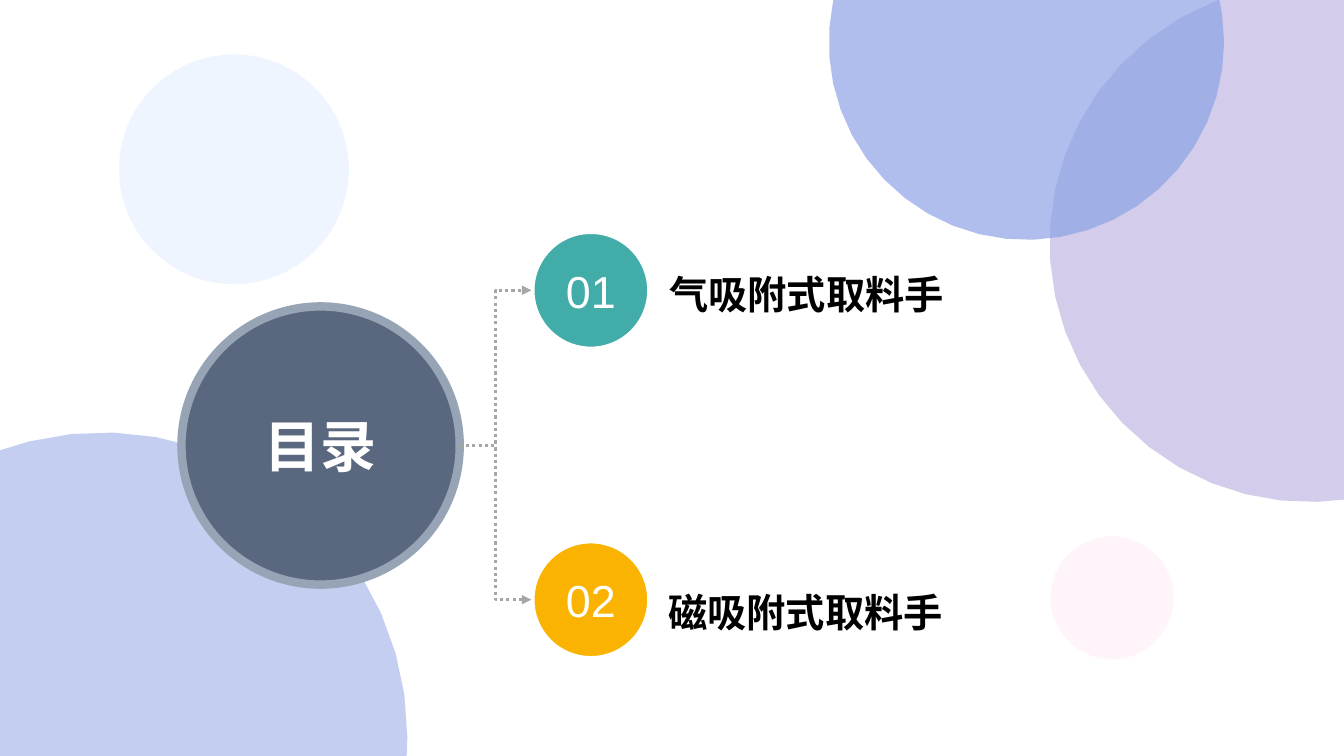
import math
from dataclasses import dataclass

import pptx
import pptx.dml.color
import pptx.enum.dml
import pptx.enum.shapes
import pptx.enum.text
import pptx.oxml
import pptx.oxml.ns
import pptx.shapes.autoshape
import pptx.slide
import pptx.text.text
import pptx.util

Inches = pptx.util.Inches
RGBColor = pptx.dml.color.RGBColor

SLIDE_WIDTH, SLIDE_HEIGHT = 13.33, 7.5
ARC_STEP = 8
FONT_NAME = "Arial"
WHITE = RGBColor(0xFF, 0xFF, 0xFF)
BLACK = RGBColor(0x00, 0x00, 0x00)
PERIWINKLE = RGBColor(0x8C, 0xA2, 0xE6)
LAVENDER = RGBColor(0xA5, 0x95, 0xD7)
SKY = RGBColor(0x6E, 0xAC, 0xF7)
PINK = RGBColor(0xF1, 0x66, 0xAC)
TEAL = RGBColor(0x42, 0xAC, 0xA8)
AMBER = RGBColor(0xFA, 0xB3, 0x01)
SLATE = RGBColor(0x59, 0x68, 0x7F)
SLATE_RIM = RGBColor(0x97, 0xA4, 0xB6)
GRAY = RGBColor(0xA6, 0xA6, 0xA6)

HUB_LEFT, HUB_TOP, HUB_SIZE = 1.8, 3.04, 2.76
BADGE_LEFT, BADGE_SIZE = 5.27, 1.18
LABEL_WIDTH, LABEL_HEIGHT = 5.16, 1.01


@dataclass(frozen=True)
class Bubble:
    center_x: float
    center_y: float
    radius: float
    color: RGBColor
    opacity: int


@dataclass(frozen=True)
class Chapter:
    number: str
    title: str
    color: RGBColor
    badge_top: float
    label_left: float
    label_top: float


BUBBLES = [
    Bubble(1.02, 7.31, 3.02, PERIWINKLE, 52),
    Bubble(12.98, 2.41, 2.57, LAVENDER, 48),
    Bubble(10.18, 0.42, 1.96, PERIWINKLE, 69),
    Bubble(2.32, 1.68, 1.14, SKY, 11),
    Bubble(11.03, 5.93, 0.61, PINK, 7),
]

CHAPTERS = [
    Chapter("01", "气吸附式取料手", TEAL, 2.29, 6.64, 2.29),
    Chapter("02", "磁吸附式取料手", AMBER, 5.36, 6.63, 5.45),
]


def clipped_outline(bubble: Bubble) -> list[tuple[float, float]]:
    """Return arc points, edge crossings and covered slide corners in angular order."""
    angles = [math.radians(degree) for degree in range(0, 360, ARC_STEP)]
    for edge in (0, SLIDE_WIDTH):
        ratio = (edge - bubble.center_x) / bubble.radius
        if abs(ratio) < 1:
            angles += [math.acos(ratio), -math.acos(ratio)]
    for edge in (0, SLIDE_HEIGHT):
        ratio = (edge - bubble.center_y) / bubble.radius
        if abs(ratio) < 1:
            angles += [math.asin(ratio), math.pi - math.asin(ratio)]
    arc = [
        (bubble.center_x + bubble.radius * math.cos(angle),
         bubble.center_y + bubble.radius * math.sin(angle))
        for angle in angles
    ]
    center = (bubble.center_x, bubble.center_y)
    corners = [(x, y) for x in (0, SLIDE_WIDTH) for y in (0, SLIDE_HEIGHT)]
    points = [
        (x, y) for x, y in arc
        if -0.001 <= x <= SLIDE_WIDTH + 0.001 and -0.001 <= y <= SLIDE_HEIGHT + 0.001
    ]
    points += [corner for corner in corners if math.dist(corner, center) < bubble.radius]
    return sorted(points, key=lambda point: math.atan2(point[1] - center[1], point[0] - center[0]))


def add_clipped_circle(slide: pptx.slide.Slide, bubble: Bubble) -> pptx.shapes.autoshape.Shape:
    points = [(Inches(x), Inches(y)) for x, y in clipped_outline(bubble)]
    builder = slide.shapes.build_freeform(*points[0])
    builder.add_line_segments(points[1:], close=True)
    return builder.convert_to_shape()


def add_circle(
    slide: pptx.slide.Slide, left: float, top: float, size: float
) -> pptx.shapes.autoshape.Shape:
    circle = slide.shapes.add_shape(
        pptx.enum.shapes.MSO_SHAPE.OVAL,
        Inches(left), Inches(top), Inches(size), Inches(size),
    )
    circle.shadow.inherit = False
    return circle


def add_bubble(slide: pptx.slide.Slide, bubble: Bubble) -> None:
    left, top = bubble.center_x - bubble.radius, bubble.center_y - bubble.radius
    size = 2 * bubble.radius
    fits = min(left, top) >= 0 and left + size <= SLIDE_WIDTH and top + size <= SLIDE_HEIGHT
    shape = add_circle(slide, left, top, size) if fits else add_clipped_circle(slide, bubble)
    shape.shadow.inherit = False
    shape.line.fill.background()
    shape.fill.solid()
    shape.fill.fore_color.rgb = bubble.color
    color = shape.element.spPr.find(".//" + pptx.oxml.ns.qn("a:srgbClr"))
    color.append(pptx.oxml.parse_xml(
        f'<a:alpha {pptx.oxml.ns.nsdecls("a")} val="{bubble.opacity * 1000}"/>'
    ))


def add_rimmed_circle(
    slide: pptx.slide.Slide, left: float, top: float, size: float,
    color: RGBColor, rim_color: RGBColor, rim_width: float,
) -> pptx.shapes.autoshape.Shape:
    circle = add_circle(slide, left, top, size)
    circle.fill.solid()
    circle.fill.fore_color.rgb = color
    circle.line.color.rgb = rim_color
    circle.line.width = pptx.util.Pt(rim_width)
    return circle


def set_text(
    frame: pptx.text.text.TextFrame, text: str, size: int, color: RGBColor,
    bold: bool, alignment: pptx.enum.text.PP_ALIGN,
) -> None:
    frame.text = text
    frame.word_wrap = True
    frame.auto_size = pptx.enum.text.MSO_AUTO_SIZE.NONE
    frame.vertical_anchor = pptx.enum.text.MSO_ANCHOR.MIDDLE
    paragraph = frame.paragraphs[0]
    paragraph.alignment = alignment
    font = paragraph.runs[0].font
    font.name, font.size, font.bold = FONT_NAME, pptx.util.Pt(size), bold
    font.color.rgb = color


def add_hub(slide: pptx.slide.Slide) -> None:
    """Draw the central disc with the slide title in front of it."""
    add_rimmed_circle(slide, HUB_LEFT, HUB_TOP, HUB_SIZE, SLATE, SLATE_RIM, 6)
    title = slide.shapes.title
    title.left, title.top = Inches(HUB_LEFT), Inches(HUB_TOP)
    title.width = title.height = Inches(HUB_SIZE)
    set_text(title.text_frame, "目录", 40, WHITE, True, pptx.enum.text.PP_ALIGN.CENTER)
    title.element.getparent().append(title.element)


def add_branch(slide: pptx.slide.Slide, chapter: Chapter) -> None:
    """Link the central disc to a chapter badge with a dotted elbow arrow."""
    branch = slide.shapes.add_connector(
        pptx.enum.shapes.MSO_CONNECTOR.ELBOW,
        Inches(HUB_LEFT + HUB_SIZE), Inches(HUB_TOP + HUB_SIZE / 2),
        Inches(BADGE_LEFT), Inches(chapter.badge_top + BADGE_SIZE / 2),
    )
    branch.line.color.rgb = GRAY
    branch.line.width = pptx.util.Pt(2.25)
    branch.line.dash_style = pptx.enum.dml.MSO_LINE.ROUND_DOT
    namespace = pptx.oxml.ns.nsdecls("a")
    properties = branch.element.spPr
    properties.find(pptx.oxml.ns.qn("a:ln")).append(
        pptx.oxml.parse_xml(f'<a:tailEnd {namespace} type="triangle"/>')
    )
    properties.append(pptx.oxml.parse_xml(f"<a:effectLst {namespace}/>"))


def add_chapter(slide: pptx.slide.Slide, chapter: Chapter) -> None:
    badge = add_rimmed_circle(
        slide, BADGE_LEFT, chapter.badge_top, BADGE_SIZE, chapter.color, WHITE, 4.5
    )
    set_text(badge.text_frame, chapter.number, 32, WHITE, False, pptx.enum.text.PP_ALIGN.CENTER)
    label = slide.shapes.add_textbox(
        Inches(chapter.label_left), Inches(chapter.label_top),
        Inches(LABEL_WIDTH), Inches(LABEL_HEIGHT),
    )
    frame = label.text_frame
    frame.margin_left = frame.margin_right = 0
    set_text(frame, chapter.title, 28, BLACK, True, pptx.enum.text.PP_ALIGN.LEFT)
    frame.paragraphs[0].line_spacing = 1.5


def main() -> None:
    presentation = pptx.Presentation()
    presentation.slide_width = Inches(SLIDE_WIDTH)
    presentation.slide_height = Inches(SLIDE_HEIGHT)
    slide = presentation.slides.add_slide(presentation.slide_layouts.get_by_name("Title Only"))
    for bubble in BUBBLES:
        add_bubble(slide, bubble)
    add_hub(slide)
    for chapter in CHAPTERS:
        add_chapter(slide, chapter)
        add_branch(slide, chapter)
    presentation.save("out.pptx")


if __name__ == "__main__":
    main()
